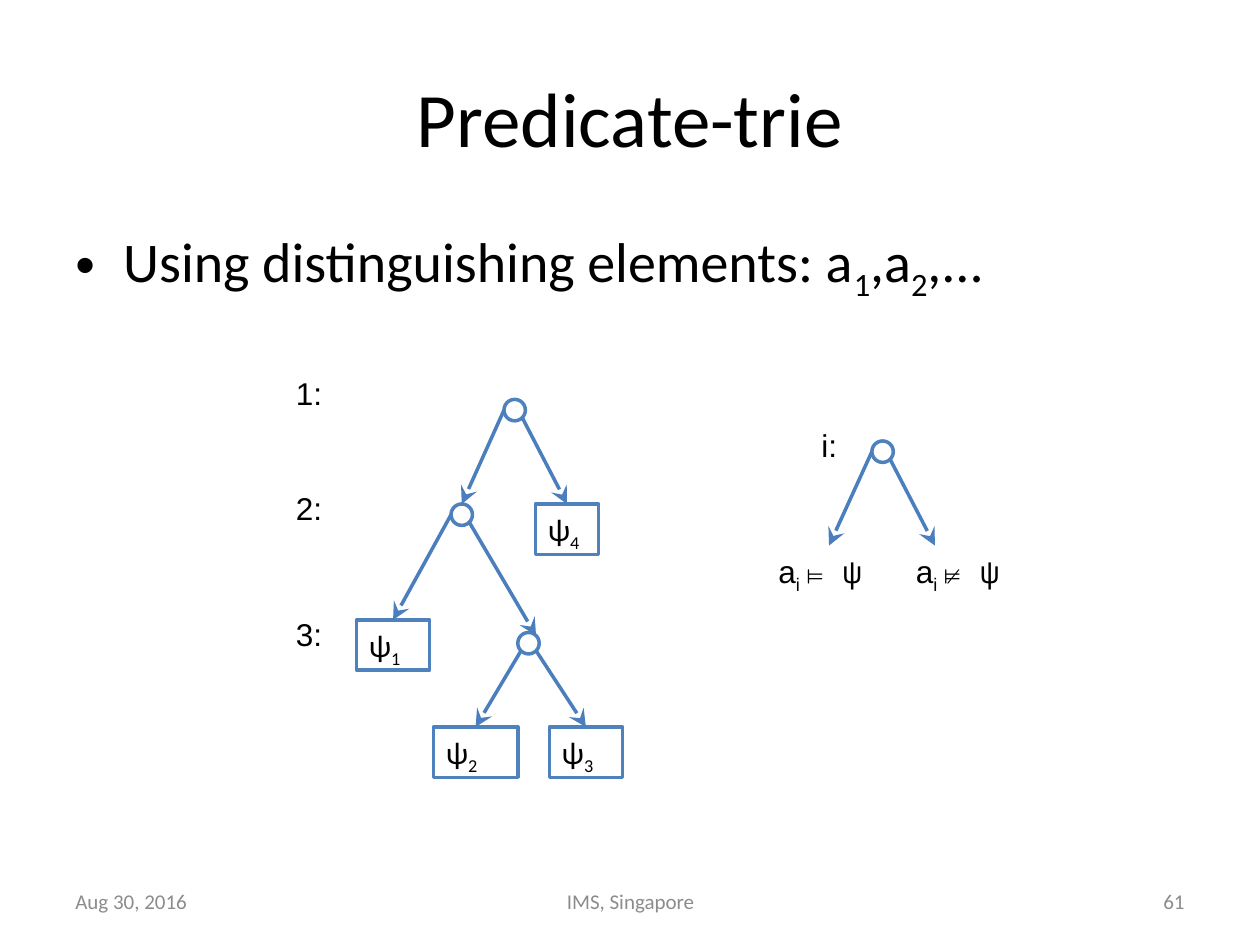
import pptx
import pptx.dml.color
import pptx.enum.shapes
import pptx.enum.text
import pptx.oxml.ns
import pptx.util
from lxml import etree
from pptx.util import Inches

BLACK = pptx.dml.color.RGBColor(0x00, 0x00, 0x00)
WHITE = pptx.dml.color.RGBColor(0xFF, 0xFF, 0xFF)
GRAY = pptx.dml.color.RGBColor(0x8C, 0x8C, 0x8C)
OUTLINE = pptx.dml.color.RGBColor(0x4F, 0x81, 0xBD)
ARROW = pptx.dml.color.RGBColor(0x4B, 0x7E, 0xBC)

ALIGN = pptx.enum.text.PP_ALIGN
ANCHOR = pptx.enum.text.MSO_ANCHOR
SHAPE = pptx.enum.shapes.MSO_SHAPE

# Points on a node, as fractions of its width and height
TOP, LEFT = (0.5, 0), (0, 0.5)
UPPER_RIGHT, LOWER_LEFT, LOWER_RIGHT = (0.85, 0.15), (0.15, 0.85), (0.85, 0.85)

NODE_SIZE = 0.17
LINE_HEIGHT = 0.4
RECTANGLE_TOP = 0


def add_child(parent, tag, **attributes):
    return etree.SubElement(parent, pptx.oxml.ns.qn(tag), attributes)


def write(frame, pieces, size=18, font="Calibri", color=BLACK,
          align=ALIGN.LEFT, anchor=ANCHOR.TOP):
    """Fill the frame with one paragraph; pieces starting with "_" are subscripts."""
    frame.word_wrap = True
    frame.vertical_anchor = anchor
    para = frame.paragraphs[0]
    para.alignment = align
    para.font.size = pptx.util.Pt(size)
    para.font.name = font
    para.font.color.rgb = color
    for piece in pieces:
        span = para.add_run()
        span.text = piece.removeprefix("_")
        if piece.startswith("_"):
            span.font._element.set("baseline", "-25000")
    return para


def add_text(page, left, top, width, height, pieces, **style):
    box = page.shapes.add_textbox(Inches(left), Inches(top), Inches(width), Inches(height))
    return write(box.text_frame, pieces, **style)


def add_outlined(page, kind, left, top, width, height):
    shape = page.shapes.add_shape(kind, Inches(left), Inches(top), Inches(width), Inches(height))
    shape.shadow.inherit = False
    shape.fill.solid()
    shape.fill.fore_color.rgb = WHITE
    shape.line.color.rgb = OUTLINE
    shape.line.width = pptx.util.Pt(2)
    return shape


def add_node(page, left, top):
    return add_outlined(page, SHAPE.OVAL, left, top, NODE_SIZE, NODE_SIZE)


def add_leaf(page, left, top, width, index):
    leaf = add_outlined(page, SHAPE.RECTANGLE, left, top, width, LINE_HEIGHT)
    write(leaf.text_frame, ["ψ", f"_{index}"])
    return leaf


def point_on(node, place):
    return node.left + int(node.width * place[0]), node.top + int(node.height * place[1])


def add_arrow(page, start, end):
    arrow = page.shapes.add_connector(pptx.enum.shapes.MSO_CONNECTOR.STRAIGHT, *start, *end)
    arrow.line.color.rgb = ARROW
    arrow.line.width = pptx.util.Pt(2)
    add_child(arrow.line._get_or_add_ln(), "a:tailEnd", type="stealth", w="lg", len="lg")
    add_child(arrow._element.spPr, "a:effectLst")
    return arrow


def point_to_leaf(page, node, place, leaf):
    arrow = add_arrow(page, point_on(node, place), point_on(leaf, TOP))
    arrow.end_connect(leaf, RECTANGLE_TOP)


def add_title(page, left, top, width, height):
    title = page.shapes.title
    title.left, title.top = Inches(left), Inches(top)
    title.width, title.height = Inches(width), Inches(height)
    write(title.text_frame, ["Predicate-trie"], size=44, align=ALIGN.CENTER, anchor=ANCHOR.MIDDLE)


def add_bullet(page, left, top, width, height):
    pieces = ["Using distinguishing elements: a", "_1", ",a", "_2", ",..."]
    para = add_text(page, left, top, width, height, pieces, size=32)
    para.space_before = pptx.util.Pt(6.4)
    settings = para._p.get_or_add_pPr()
    settings.set("marL", str(Inches(0.38)))
    settings.set("indent", str(Inches(-0.38)))
    bullet_font = settings.makeelement(pptx.oxml.ns.qn("a:buFont"), {"typeface": "Arial"})
    bullet = settings.makeelement(pptx.oxml.ns.qn("a:buChar"), {"char": "•"})
    defaults = settings.find(pptx.oxml.ns.qn("a:defRPr"))
    defaults.addprevious(bullet_font)
    defaults.addprevious(bullet)


def add_trie(page, left, top):
    for level, drop in enumerate((0, 0.91, 1.91), start=1):
        add_text(page, left, top + drop, 0.58, LINE_HEIGHT, [f"{level}:"], font="Arial")

    root = add_node(page, left + 1.75, top + 0.25)
    second = add_node(page, left + 1.33, top + 1.08)
    third = add_node(page, left + 1.86, top + 2.1)
    leaf_1 = add_leaf(page, left + 0.58, top + 2, 0.58, 1)
    leaf_2 = add_leaf(page, left + 1.19, top + 2.85, 0.67, 2)
    leaf_3 = add_leaf(page, left + 2.11, top + 2.85, 0.58, 3)
    leaf_4 = add_leaf(page, left + 2, top + 1.08, 0.5, 4)

    add_arrow(page, point_on(root, LEFT), point_on(second, TOP))
    add_arrow(page, point_on(second, LOWER_RIGHT), point_on(third, UPPER_RIGHT))
    for node, place, leaf in (
        (root, LOWER_RIGHT, leaf_4),
        (second, LEFT, leaf_1),
        (third, LOWER_LEFT, leaf_2),
        (third, LOWER_RIGHT, leaf_3),
    ):
        point_to_leaf(page, node, place, leaf)


def add_branch_rule(page, left, top):
    """Show how level i sends a predicate left or right."""
    add_text(page, left + 0.34, top, 0.58, LINE_HEIGHT, ["i:"], font="Arial")
    node = add_node(page, left + 0.84, top + 0.17)
    for place, tip, label_left, relation in (
        (LEFT, 0.5, 0, "⊨ ψ"),
        (LOWER_RIGHT, 1.34, 1.09, "⊭ ψ"),
    ):
        add_arrow(page, point_on(node, place), (Inches(left + tip), Inches(top + 1)))
        para = add_text(page, left + label_left, top + 1, 0.92, LINE_HEIGHT,
                        ["a", "_i ", relation], font="Arial")
        para.runs[-1].font.name = "Courier New"


def add_footer(page, top, height):
    for left, width, text, align in (
        (0.5, 2.33, "Aug 30, 2016", ALIGN.LEFT),
        (3.42, 3.17, "IMS, Singapore", ALIGN.CENTER),
        (7.17, 2.33, "61", ALIGN.RIGHT),
    ):
        add_text(page, left, top, width, height, [text], size=12, color=GRAY,
                 align=align, anchor=ANCHOR.MIDDLE)


def main():
    deck = pptx.Presentation()
    deck.slide_width, deck.slide_height = Inches(10), Inches(7.5)
    page = deck.slides.add_slide(deck.slide_layouts.get_by_name("Title Only"))
    add_title(page, 0.5, 0.3, 9, 1.25)
    add_bullet(page, 0.5, 1.75, 9, 4.95)
    add_trie(page, 2.25, 2.92)
    add_branch_rule(page, 6.08, 3.33)
    add_footer(page, 6.95, 0.4)
    deck.save("out.pptx")


if __name__ == "__main__":
    main()
